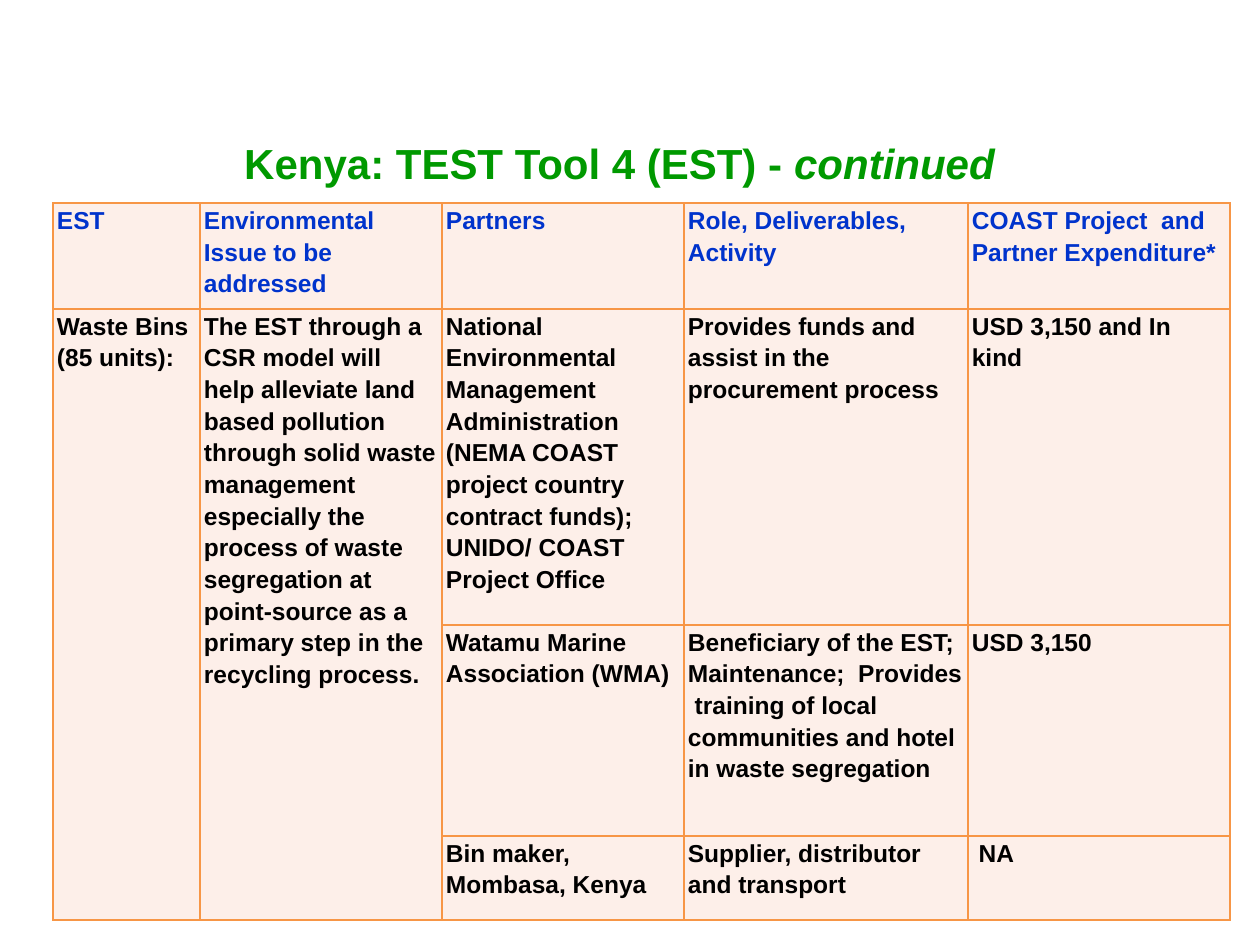
import pptx
import pptx.dml.color
import pptx.enum.text
import pptx.oxml
import pptx.oxml.ns
import pptx.util

UNIT = 914400 // 126
HUES = {"title": "009900", "head": "0033CC", "body": "000000",
        "fill": "FDEFE9", "edge": "F79646"}
ALIGN = pptx.enum.text.PP_ALIGN
ANCHOR = pptx.enum.text.MSO_ANCHOR

COLS = [147, 242, 242, 284, 262]
ROWS = [106, 316, 211, 84]
CELLS = [
    ["EST", "Environmental Issue to be addressed", "Partners",
     "Role, Deliverables, Activity", "COAST Project  and Partner Expenditure*"],
    ["Waste Bins (85 units):",
     "The EST through a CSR model will help alleviate land based pollution "
     "through solid waste management especially the process of waste "
     "segregation at point-source as a primary step in the recycling process.",
     "National Environmental Management Administration (NEMA COAST project "
     "country contract funds); UNIDO/ COAST Project Office",
     "Provides funds and assist in the procurement process",
     "USD 3,150 and In kind"],
    ["", "", "Watamu Marine Association (WMA)",
     "Beneficiary of the EST; Maintenance;  Provides  training of local "
     "communities and hotel in waste segregation", "USD 3,150"],
    ["", "", "Bin maker, Mombasa, Kenya",
     "Supplier, distributor and transport", " NA"],
]


def px(num):
    return pptx.util.Emu(num * UNIT)


def put(item, **vals):
    for key, val in vals.items():
        setattr(item, key, val)


class Deck:
    face = "Arial"

    def __init__(self):
        self.file = pptx.Presentation()
        put(self.file, slide_width=pptx.util.Inches(10),
            slide_height=pptx.util.Inches(7.5))
        self.slide = self.file.slides.add_slide(self.file.slide_layouts[5])

    def style(self, font, size, hue, slant=False):
        put(font, name=self.face, size=pptx.util.Pt(size), bold=True,
            italic=slant)
        font.color.rgb = pptx.dml.color.RGBColor.from_string(HUES[hue])

    def title(self, box, parts):
        shape = self.slide.shapes.title
        put(shape, **dict(zip(("left", "top", "width", "height"),
                              map(px, box))))
        frame = shape.text_frame
        put(frame, word_wrap=True, vertical_anchor=ANCHOR.TOP,
            margin_top=px(11))
        para = frame.paragraphs[0]
        para.alignment = ALIGN.CENTER
        for text, slant in parts:
            run = para.add_run()
            run.text = text
            self.style(run.font, 24, "title", slant)

    def edge(self, cell):
        props = cell._tc.get_or_add_tcPr()
        for side in ("lnL", "lnR", "lnT", "lnB"):
            props.append(pptx.oxml.parse_xml(
                f'<a:{side} {pptx.oxml.ns.nsdecls("a")} w="12700">'
                f'<a:solidFill><a:srgbClr val="{HUES["edge"]}"/>'
                f'</a:solidFill></a:{side}>'))

    def cell(self, cell, text, hue):
        put(cell, margin_left=px(4), margin_right=px(4), margin_top=0,
            margin_bottom=0, vertical_anchor=ANCHOR.TOP)
        self.edge(cell)
        cell.fill.solid()
        cell.fill.fore_color.rgb = pptx.dml.color.RGBColor.from_string(
            HUES["fill"])
        para = cell.text_frame.paragraphs[0]
        para.line_spacing = 1.15
        self.style(para.font, 14, hue)
        if text:
            run = para.add_run()
            run.text = text
            self.style(run.font, 14, hue)

    def table(self, left, top, cols, rows, cells):
        grid = self.slide.shapes.add_table(
            len(rows), len(cols), px(left), px(top), px(sum(cols)),
            px(sum(rows))).table
        for col, wide in zip(grid.columns, cols):
            col.width = px(wide)
        for row, high in zip(grid.rows, rows):
            row.height = px(high)
        for i, line in enumerate(cells):
            for j, text in enumerate(line):
                self.cell(grid.cell(i, j), text, "body" if i else "head")
        for j in range(2):
            grid.cell(1, j).merge(grid.cell(len(rows) - 1, j))


def main():
    deck = Deck()
    deck.title((42, 126, 1155, 94),
               [("Kenya: TEST Tool 4 (EST) - ", False), ("continued", True)])
    deck.table(53, 203, COLS, ROWS, CELLS)
    deck.file.save("out.pptx")


if __name__ == "__main__":
    main()
